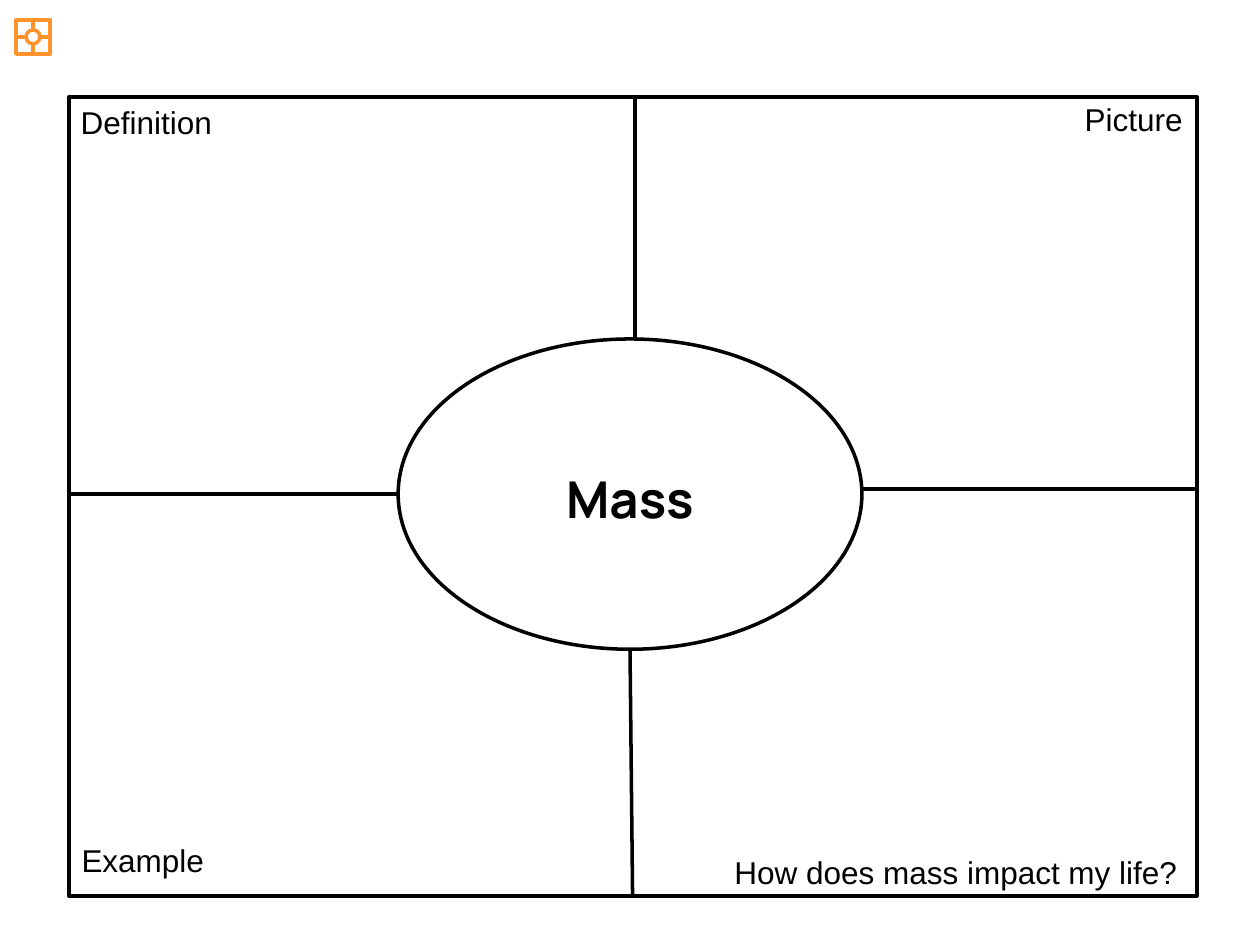
from dataclasses import dataclass
from lxml.etree import SubElement
from pptx import Presentation
from pptx.dml.color import RGBColor
from pptx.enum.shapes import MSO_CONNECTOR, MSO_SHAPE
from pptx.enum.text import MSO_ANCHOR, MSO_AUTO_SIZE, PP_ALIGN
from pptx.oxml.ns import qn
from pptx.util import Pt


@dataclass(frozen=True)
class Theme:
    ink: RGBColor = RGBColor(0, 0, 0)
    paper: RGBColor = RGBColor(255, 255, 255)
    accent: RGBColor = RGBColor(0xFF, 0x93, 0x2B)
    head: str = "Manrope"
    body: str = "Arial"
    big: int = 29
    small: int = 18
    stroke: int = 2


class Sheet:
    def __init__(self, slide, theme):
        self.slide = slide
        self.theme = theme

    def shape(self, kind, box, color, filled=False):
        shape = self.slide.shapes.add_shape(kind, *map(Pt, box))
        shape.shadow.inherit = False
        if filled:
            shape.fill.solid()
            shape.fill.fore_color.rgb = self.theme.paper
        else:
            shape.fill.background()
        shape.line.color.rgb = color
        shape.line.width = Pt(self.theme.stroke)

    def line(self, start, end, color):
        line = self.slide.shapes.add_connector(
            MSO_CONNECTOR.STRAIGHT, *map(Pt, start + end))
        line.line.color.rgb = color
        line.line.width = Pt(self.theme.stroke)
        SubElement(line.element.spPr, qn("a:effectLst"))

    def grid(self, frame, hub, color, top, low, left, right):
        """Frame with a central oval; low holds the inner and outer x."""
        x, y, w, h = frame
        hx, hy, hw, hh = hub
        self.shape(MSO_SHAPE.RECTANGLE, frame, color)
        self.line((top, y), (top, hy), color)
        self.line((low[0], hy + hh), (low[1], y + h), color)
        self.line((x, left), (hx, left), color)
        self.line((hx + hw, right), (x + w, right), color)
        self.shape(MSO_SHAPE.OVAL, hub, color, filled=True)

    def text(self, shape, words, font, size, align, bold=False):
        frame = shape.text_frame
        frame.word_wrap = True
        frame.auto_size = MSO_AUTO_SIZE.NONE
        frame.vertical_anchor = MSO_ANCHOR.TOP
        para = frame.paragraphs[0]
        para.alignment = align
        run = para.add_run()
        run.text = words
        run.font.name = font
        run.font.size = Pt(size)
        run.font.bold = bold
        run.font.color.rgb = self.theme.ink

    def title(self, words, box):
        shape = self.slide.shapes.title
        shape.left, shape.top, shape.width, shape.height = map(Pt, box)
        self.text(shape, words, self.theme.head, self.theme.big,
                  PP_ALIGN.CENTER, bold=True)
        # Bring the title in front of the oval
        shape.element.getparent().append(shape.element)

    def label(self, words, box, align=PP_ALIGN.LEFT):
        shape = self.slide.shapes.add_textbox(*map(Pt, box))
        self.text(shape, words, self.theme.body, self.theme.small, align)


def main():
    deck = Presentation()
    deck.slide_width, deck.slide_height = Pt(720), Pt(540)
    theme = Theme()
    sheet = Sheet(deck.slides.add_slide(deck.slide_layouts[5]), theme)

    # Four-part organizer with the word in the middle
    sheet.grid((39.4, 55.3, 644.6, 456.7), (227.5, 193.7, 265, 177.3),
               theme.ink, top=362.8, low=(360, 361.5), left=282.4, right=279.4)
    sheet.title("Mass", (235.5, 263.5, 249, 42.5))

    # Corner labels
    sheet.label("Definition", (39, 55.5, 90, 29))
    sheet.label("Example", (39.5, 477, 85, 29))
    sheet.label("Picture", (612.7, 53.5, 71.3, 29))
    sheet.label("How does mass impact my life?", (356.5, 484, 323.3, 29),
                PP_ALIGN.RIGHT)

    # Small organizer icon
    mid_x, mid_y = 18.9, 21.1
    half, ring = 9.8, 4
    sheet.grid((mid_x - half, mid_y - half, 2 * half, 2 * half),
               (mid_x - ring, mid_y - ring, 2 * ring, 2 * ring),
               theme.accent, top=mid_x, low=(mid_x, mid_x),
               left=mid_y, right=mid_y)

    deck.save("out.pptx")


if __name__ == "__main__":
    main()
